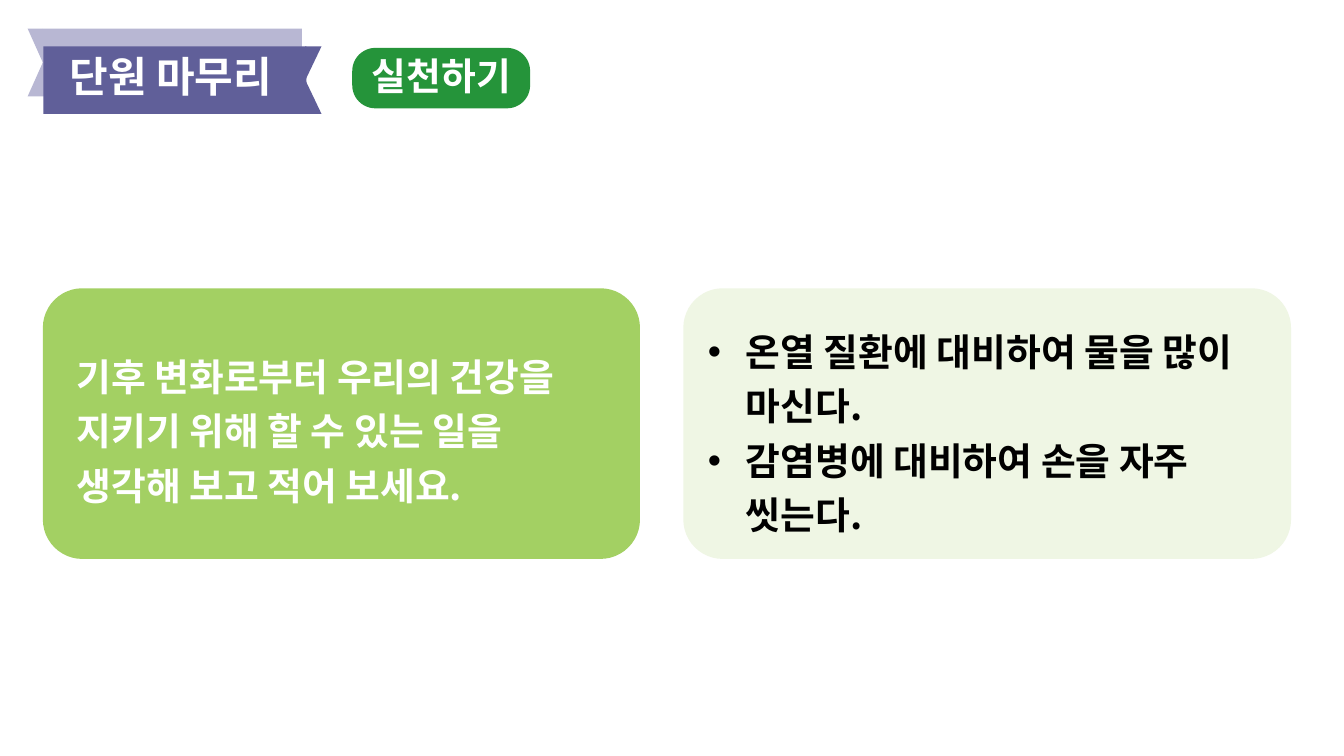
from dataclasses import dataclass

from lxml.etree import SubElement
from pptx import Presentation
from pptx.dml.color import RGBColor
from pptx.enum.shapes import MSO_SHAPE as SHAPE
from pptx.enum.text import MSO_ANCHOR, MSO_AUTO_SIZE, PP_ALIGN
from pptx.oxml.ns import qn
from pptx.util import Inches, Pt


@dataclass(frozen=True)
class Theme:
    font: str = "Noto Sans CJK KR"
    title_size: int = 60
    body_size: int = 54
    white: str = "FFFFFF"
    black: str = "000000"
    ribbon: str = "605F99"
    ribbon_back: str = "B8B7D3"
    badge: str = "25943A"
    question: str = "A3D063"
    answer: str = "EFF6E4"


THEME = Theme()
CARD_TOP, CARD_HEIGHT = 5.72, 5.37


def add_block(s, kind, box, color, adj=None, rotation=0):
    sp = s.shapes.add_shape(kind, *map(Inches, box))
    sp.shadow.inherit = False
    sp.fill.solid()
    sp.fill.fore_color.rgb = RGBColor.from_string(color)
    sp.line.fill.background()
    sp.rotation = rotation
    if adj is not None:
        sp.adjustments[0] = adj


def add_bullet(p, indent):
    pPr = p._p.get_or_add_pPr()
    pPr.set("marL", str(Inches(indent)))
    pPr.set("indent", str(-Inches(indent)))
    SubElement(pPr, qn("a:buFont"), typeface="Arial")
    SubElement(pPr, qn("a:buChar"), char="•")


def write(sp, lines, size, color, spacing, align=PP_ALIGN.LEFT,
          anchor=MSO_ANCHOR.TOP, bullets=False, wrap=True):
    tf = sp.text_frame
    tf.word_wrap = wrap
    tf.auto_size = MSO_AUTO_SIZE.SHAPE_TO_FIT_TEXT
    tf.vertical_anchor = anchor
    for i, line in enumerate(lines):
        p = tf.add_paragraph() if i else tf.paragraphs[0]
        p.alignment = align
        p.line_spacing = spacing
        p.space_before = Pt(0)
        if bullets:
            add_bullet(p, 0.75)
        r = p.add_run()
        r.text = line
        r.font.size = Pt(size)
        r.font.bold = True
        r.font.color.rgb = RGBColor.from_string(color)
        r.font.name = THEME.font
        SubElement(r.font._element, qn("a:ea"), typeface=THEME.font)


def add_text(s, box, lines, color, spacing, **options):
    sp = s.shapes.add_textbox(*map(Inches, box))
    write(sp, lines, THEME.body_size, color, spacing, **options)
    return sp


def add_badge(s, text):
    add_block(s, SHAPE.ROUNDED_RECTANGLE, (6.99, 0.95, 3.53, 1.2), THEME.badge, 0.383)
    sp = add_text(s, (7.28, 1.09, 2.96, 0.93), [text], THEME.white, 0.9,
                  align=PP_ALIGN.CENTER, anchor=MSO_ANCHOR.MIDDLE, wrap=False)
    tf = sp.text_frame
    tf.margin_left = tf.margin_right = tf.margin_top = tf.margin_bottom = Inches(0.06)


def add_ribbon_title(s, text):
    """Two notched ribbons, with the title placeholder in front."""
    back, front = THEME.ribbon_back, THEME.ribbon
    add_block(s, SHAPE.PENTAGON, (0.85, 0.57, 5.14, 1.34), back, 0, 180)
    add_block(s, SHAPE.CHEVRON, (0.55, 0.57, 0.6, 1.34), back)
    add_block(s, SHAPE.PENTAGON, (0.86, 0.92, 5.22, 1.34), front, 0)
    add_block(s, SHAPE.CHEVRON, (5.74, 0.92, 0.64, 1.34), front, rotation=180)
    title = s.shapes.title
    title.left, title.top, title.width, title.height = map(Inches, (1.28, 1.07, 4.41, 1.01))
    write(title, [text], THEME.title_size, THEME.white, 0.9)
    s.shapes._spTree.append(title._element)


def add_card(s, left, width, fill, text_box, lines, color, bullets=False):
    add_block(s, SHAPE.ROUNDED_RECTANGLE, (left, CARD_TOP, width, CARD_HEIGHT), fill, 0.146)
    add_text(s, text_box, lines, color, 1.2, bullets=bullets)


def main():
    prs = Presentation()
    prs.slide_width, prs.slide_height = Inches(26.67), Inches(15)
    s = prs.slides.add_slide(prs.slide_layouts[5])
    add_badge(s, "실천하기")
    add_ribbon_title(s, "단원 마무리")
    add_card(s, 0.85, 11.85, THEME.question, (1.42, 6.79, 10.58, 3.4),
             ["기후 변화로부터 우리의 건강을 지키기 위해 할 수 있는 일을 생각해 보고 적어 보세요."],
             THEME.white)
    add_card(s, 13.56, 12.06, THEME.answer, (13.95, 6.29, 11.48, 4.58),
             ["온열 질환에 대비하여 물을 많이 마신다.", "감염병에 대비하여 손을 자주 씻는다."],
             THEME.black, bullets=True)
    prs.save("out.pptx")


if __name__ == "__main__":
    main()
